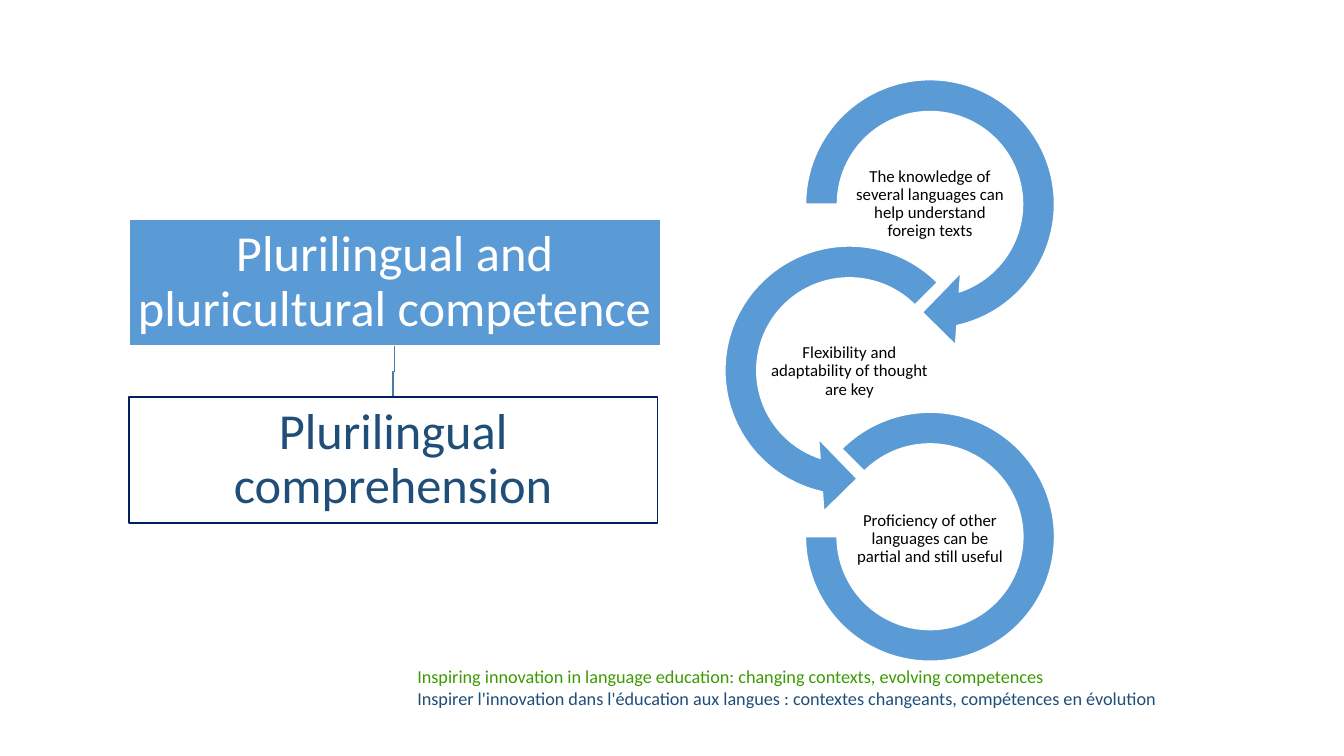
from dataclasses import dataclass
from pptx import Presentation
from pptx import util as u
from pptx.dml.color import RGBColor
from pptx.enum import shapes, text

BLUE = RGBColor(0x5B, 0x9B, 0xD5)
DEEP = RGBColor(0x1F, 0x4E, 0x79)
NAVY = RGBColor(0x00, 0x20, 0x60)
STEEL = RGBColor(0x49, 0x7C, 0xAB)
GREEN = RGBColor(0x3C, 0x9B, 0x00)
WHITE = RGBColor(0xFF, 0xFF, 0xFF)
BLACK = RGBColor(0, 0, 0)

WIDE, HIGH = u.Inches(13.33), u.Inches(7.5)
KIND = shapes.MSO_SHAPE


@dataclass
class Area:
    """Left, top, width and height in percent of the slide."""
    x: float
    y: float
    w: float
    h: float

    def emu(self) -> tuple[int, int, int, int]:
        return (across(self.x), down(self.y), across(self.w), down(self.h))


@dataclass
class Panel:
    label: str
    area: Area
    fill: RGBColor
    line: RGBColor
    ink: RGBColor


@dataclass
class Ring:
    label: str
    kind: KIND
    mid: float
    size: float  # inches
    bends: tuple[float, ...]


def across(share: float) -> int:
    return int(WIDE * share / 100)


def down(share: float) -> int:
    return int(HIGH * share / 100)


def write(shape, *parts: tuple[str, RGBColor], size: float = 12, inset: float = 0.01,
          align=text.PP_ALIGN.CENTER, anchor=text.MSO_ANCHOR.MIDDLE,
          spacing: float = 0.9) -> None:
    """Fill a shape with one paragraph, each coloured part on its own line."""
    frame = shape.text_frame
    frame.word_wrap = True
    frame.vertical_anchor = anchor
    frame.margin_left = frame.margin_right = u.Inches(inset)
    frame.margin_top = frame.margin_bottom = u.Inches(min(inset, 0.05))
    para = frame.paragraphs[0]
    para.alignment, para.line_spacing = align, spacing
    for i, (words, ink) in enumerate(parts):
        if i:
            para.add_line_break()
        run = para.add_run()
        run.text = words
        run.font.name, run.font.size = "Calibri", u.Pt(size)
        run.font.color.rgb = ink


def draw(slide, kind: KIND, area: Area, fill: RGBColor, line: RGBColor):
    shape = slide.shapes.add_shape(kind, *area.emu())
    shape.shadow.inherit = False
    shape.fill.solid()
    shape.fill.fore_color.rgb = fill
    shape.line.color.rgb = line
    shape.line.width = u.Pt(1)
    return shape


def link(slide, top: Area, low: Area) -> None:
    """Draw the stepped line between two stacked panels."""
    x1, x2 = (across(a.x + a.w / 2) for a in (top, low))
    y1, y2 = down(top.y + top.h), down(low.y)
    half = (y1 + y2) // 2
    path = slide.shapes.build_freeform(x1, y1)
    path.add_line_segments([(x1, half), (x2, half), (x2, y2)], close=False)
    step = path.convert_to_shape()
    step.shadow.inherit = False
    step.fill.background()
    step.line.color.rgb = STEEL
    step.line.width = u.Pt(1)


def centre(x: float, y: float, w: float, h: float) -> Area:
    return Area(x - w / 2, y - h / 2, w, h)


PANELS = [
    Panel("Plurilingual and pluricultural competence",
          Area(9.6, 29.07, 39.53, 16.67), BLUE, WHITE, WHITE),
    Panel("Plurilingual comprehension",
          Area(9.6, 52.53, 39.31, 16.67), WHITE, NAVY, DEEP),
]
RINGS = [
    Ring("The knowledge of several languages can help understand foreign texts",
         KIND.CIRCULAR_ARROW, 69.2, 2.87, (0.11, 11.42, 45, 108, 0.125)),
    Ring("Flexibility and adaptability of thought are key",
         KIND.LEFT_CIRCULAR_ARROW, 63.2, 2.87, (0.11, 11.42, 63, 189, 0.125)),
    Ring("Proficiency of other languages can be partial and still useful",
         KIND.BLOCK_ARC, 69.2, 2.47, (135, 108, 0.127)),
]
FIRST, STEP, DROP = 27, 22, 22.13  # first row, ring step, label step


def main() -> None:
    deck = Presentation()
    deck.slide_width, deck.slide_height = WIDE, HIGH
    slide = deck.slides.add_slide(deck.slide_layouts[6])

    # Footer
    foot = slide.shapes.add_textbox(*Area(30.31, 87.33, 59.41, 7.2).emu())
    write(foot,
          ("Inspiring innovation in language education: changing contexts, "
           "evolving competences", GREEN),
          ("Inspirer l'innovation dans l'éducation aux langues : contextes "
           "changeants, compétences en évolution", DEEP),
          size=13, inset=0.1, align=text.PP_ALIGN.LEFT,
          anchor=text.MSO_ANCHOR.TOP, spacing=1.0)

    # Panels and their link
    link(slide, PANELS[0].area, PANELS[1].area)
    for panel in PANELS:
        box = draw(slide, KIND.RECTANGLE, panel.area, panel.fill, panel.line)
        write(box, (panel.label, panel.ink), size=36, inset=0.03)

    # Chain of rings with labels
    for i, ring in enumerate(RINGS):
        size = u.Inches(ring.size)
        area = centre(ring.mid, FIRST + i * STEP, 100 * size / WIDE, 100 * size / HIGH)
        arc = draw(slide, ring.kind, area, BLUE, WHITE)
        for n, bend in enumerate(ring.bends):
            arc.adjustments[n] = bend
        note = slide.shapes.add_textbox(
            *centre(ring.mid, FIRST + i * DROP, 12, 10.67).emu())
        write(note, (ring.label, BLACK))

    deck.save("out.pptx")


if __name__ == "__main__":
    main()
